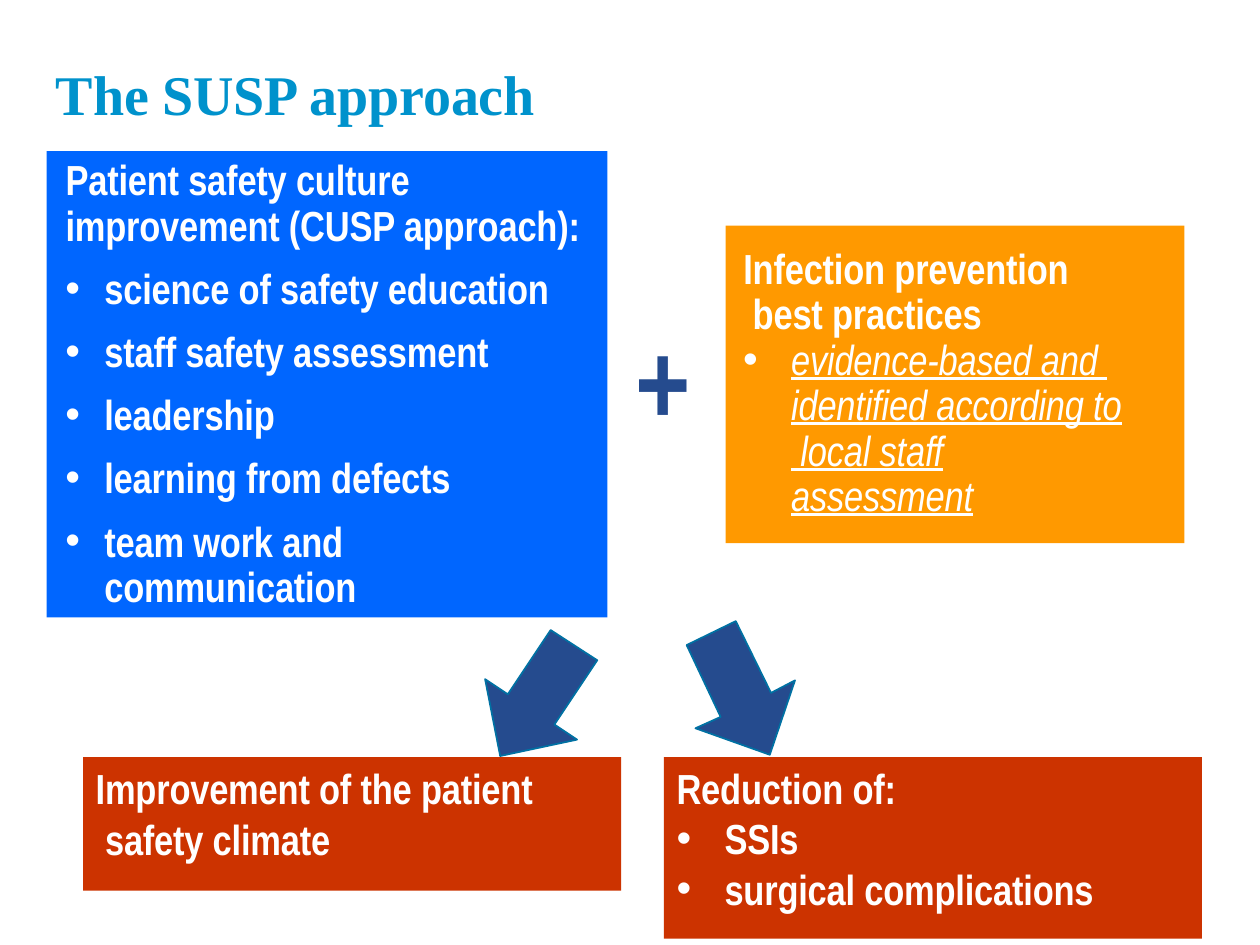
from dataclasses import dataclass

from lxml import etree
from pptx import Presentation
from pptx.dml.color import RGBColor
from pptx.enum.shapes import MSO_SHAPE
from pptx.enum.text import MSO_ANCHOR, PP_ALIGN
from pptx.oxml.ns import qn
from pptx.util import Inches, Pt

RECTANGLE = MSO_SHAPE.RECTANGLE
TOP = MSO_ANCHOR.TOP
LEFT = PP_ALIGN.LEFT
WIDTH, HEIGHT = Inches(10), Inches(7.5)


@dataclass(frozen=True)
class Theme:
    """Colours, fonts and type sizes of the slide."""
    title: str = "0092CC"
    culture: str = "0066FF"
    practices: str = "FF9900"
    outcome: str = "CC3300"
    arrow: str = "254B8E"
    arrow_edge: str = "0071A3"
    light: str = "FFFFFF"
    title_font: str = "Times New Roman"
    body_font: str = "Arial Narrow"
    title_size: int = 32
    body_size: int = 24
    plus_size: int = 66


THEME = Theme()


def across(share):
    """Turn a percentage of the slide's width into a length."""
    return round(WIDTH * share / 100)


def down(share):
    """Turn a percentage of the slide's height into a length."""
    return round(HEIGHT * share / 100)


def place(area):
    """Turn left, top, width and height in percent into lengths."""
    left, top, width, height = area
    return across(left), down(top), across(width), down(height)


def set_format(target, values):
    """Set every attribute named in a dict."""
    for name, value in values.items():
        setattr(target, name, value)


def line(text, margin=0, hanging=0, spacing=None, before=0, **font):
    """Describe one paragraph, with its lengths in points."""
    return {"text": text, "margin": margin, "hanging": hanging,
            "spacing": spacing, "before": before, "font": font}


def set_indent(paragraph, margin, hanging):
    """Indent a paragraph, with a bullet when it hangs."""
    properties = paragraph._p.get_or_add_pPr()
    properties.set("marL", str(Pt(margin)))
    properties.set("indent", str(-Pt(hanging)))
    if hanging:
        etree.SubElement(properties, qn("a:buFont")).set("typeface", "Arial")
        etree.SubElement(properties, qn("a:buChar")).set("char", "•")


def write(shape, lines, inset, font, colour, wrap=True):
    """Fill a shape with paragraphs below a top inset in points."""
    frame = shape.text_frame
    set_format(frame, {"word_wrap": wrap, "vertical_anchor": TOP,
                       "margin_left": 0, "margin_right": 0,
                       "margin_top": Pt(inset), "margin_bottom": 0})
    for index, item in enumerate(lines):
        paragraph = frame.add_paragraph() if index else frame.paragraphs[0]
        paragraph.text = item["text"]
        set_indent(paragraph, item["margin"], item["hanging"])
        set_format(paragraph, {"alignment": LEFT, "line_spacing": item["spacing"],
                               "space_before": Pt(item["before"])})
        for run in paragraph.runs:
            set_format(run.font, {**font, **item["font"]})
            run.font.color.rgb = RGBColor.from_string(colour)
            run._r.get_or_add_rPr().set("spc", "-10")


def add_panel(slide, area, colour, lines, inset):
    """Add a coloured rectangle with light bold text."""
    shape = slide.shapes.add_shape(RECTANGLE, *place(area))
    shape.shadow.inherit = False
    shape.fill.solid()
    shape.fill.fore_color.rgb = RGBColor.from_string(colour)
    shape.line.fill.background()
    font = {"name": THEME.body_font, "size": Pt(THEME.body_size), "bold": True}
    write(shape, lines, inset, font, THEME.light)


def add_label(slide, area, text, name, size, colour):
    """Add one line of bold text without a panel."""
    shape = slide.shapes.add_textbox(*place(area))
    font = {"name": name, "size": Pt(size), "bold": True}
    write(shape, [line(text, margin=1)], 1, font, colour, wrap=False)


def add_arrow(slide, corners):
    """Add a slanted block arrow through corners in percent."""
    points = [(across(x), down(y)) for x, y in corners]
    builder = slide.shapes.build_freeform(*points[0])
    builder.add_line_segments(points[1:], close=True)
    shape = builder.convert_to_shape()
    shape.shadow.inherit = False
    shape.fill.solid()
    shape.fill.fore_color.rgb = RGBColor.from_string(THEME.arrow)
    shape.line.color.rgb = RGBColor.from_string(THEME.arrow_edge)
    shape.line.width = Pt(1)


def main():
    """Build the slide and save it."""
    presentation = Presentation()
    set_format(presentation, {"slide_width": WIDTH, "slide_height": HEIGHT})
    slide = presentation.slides.add_slide(presentation.slide_layouts[6])

    add_label(slide, (4.3, 6.13, 38.5, 7.47), "The SUSP approach",
              THEME.title_font, THEME.title_size, THEME.title)

    topics = ["science of safety education", "staff safety assessment",
              "leadership", "learning from defects"]
    culture = [line("Patient safety culture\vimprovement (CUSP approach):", 10.8,
                    spacing=Pt(26))]
    culture += [line(topic, 33, 22.3, before=7.2) for topic in topics]
    culture.append(line("team work and\vcommunication", 33, 22.3, Pt(25.7), 10.7))
    add_panel(slide, (3.7, 16, 44.5, 49.33), THEME.culture, culture, 4.3)

    practices = [
        line("Infection prevention\v best practices", 10.1, spacing=Pt(25.7)),
        line("evidence-based and \videntified according to\v local staff\vassessment",
             37.4, 27.4, Pt(26), bold=False, italic=True, underline=True)]
    add_panel(slide, (57.6, 23.87, 36.4, 33.6), THEME.practices, practices, 13)

    climate = [line("Improvement of the patient\v safety climate", 7.2, spacing=1.01)]
    add_panel(slide, (6.6, 80.13, 42.7, 14.13), THEME.outcome, climate, 2.9)

    reduction = [line("Reduction of:", 7.2)]
    reduction += [line(text, 34.6, 27.4, Pt(28.8))
                  for text in ("SSIs", "surgical complications")]
    add_panel(slide, (52.7, 80.13, 42.7, 19.2), THEME.outcome, reduction, 2.9)

    add_label(slide, (50.3, 32.53, 4.7, 15.07), "+",
              THEME.body_font, THEME.plus_size, THEME.arrow)

    add_arrow(slide, [(38.5, 71.87), (40.3, 73.47), (43.7, 66.67), (47.4, 69.87),
                      (44, 76.67), (45.8, 78.27), (39.7, 80)])
    add_arrow(slide, [(55.2, 77.07), (57.2, 75.87), (54.5, 68.27), (58.4, 65.73),
                      (61.2, 73.33), (63.1, 72), (61.1, 79.87)])
    presentation.save("out.pptx")


if __name__ == "__main__":
    main()
